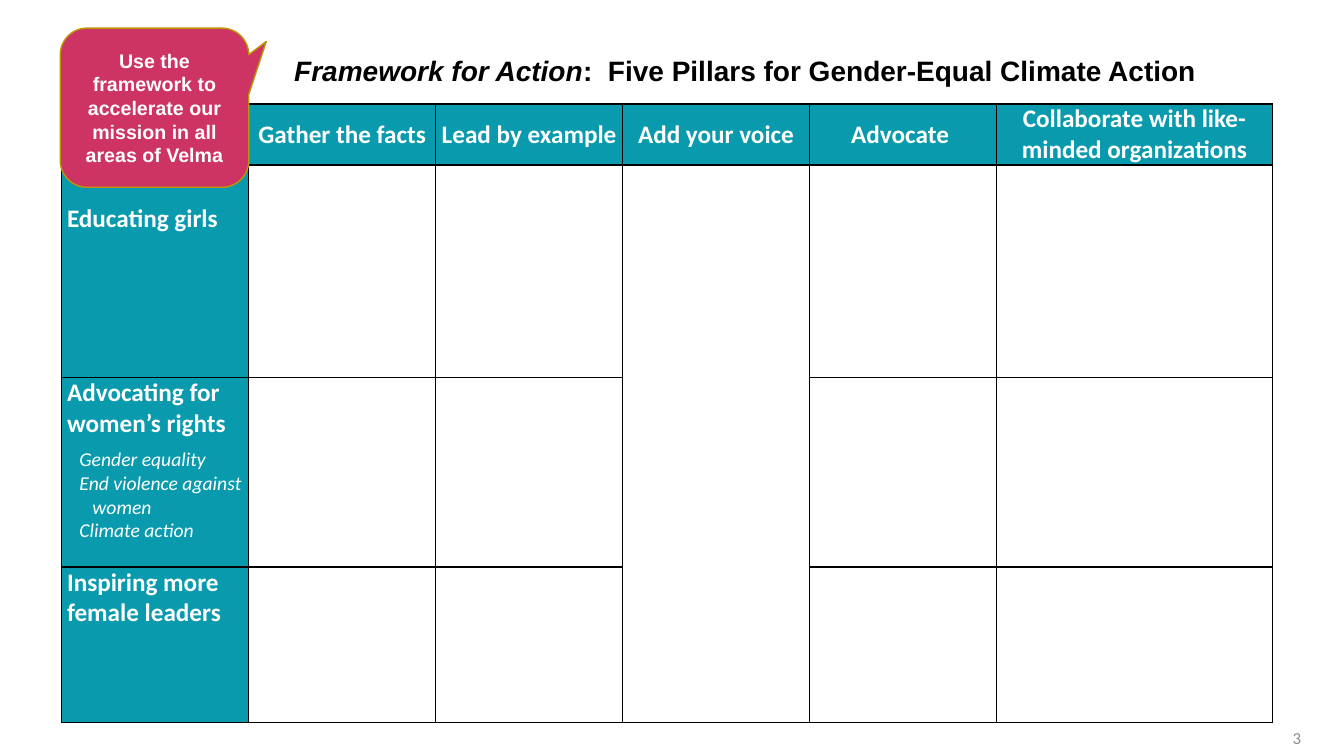
import pptx
import pptx.dml.color
import pptx.enum.shapes
import pptx.enum.text
import pptx.oxml.ns
import pptx.util
from lxml import etree

Cm = pptx.util.Cm
Pt = pptx.util.Pt
RGBColor = pptx.dml.color.RGBColor
Align = pptx.enum.text.PP_ALIGN
Anchor = pptx.enum.text.MSO_ANCHOR
qn = pptx.oxml.ns.qn

BLACK = RGBColor(0x00, 0x00, 0x00)
WHITE = RGBColor(0xFF, 0xFF, 0xFF)
GREY = RGBColor(0x8C, 0x8C, 0x8C)
TEAL = RGBColor(0x09, 0x9A, 0xAD)
PALE_TEAL = RGBColor(0x5E, 0xC8, 0xD9)
PINK = RGBColor(0xCD, 0x34, 0x63)
GOLD = RGBColor(0xBD, 0x95, 0x06)

PILLARS = ["Gather the facts", "Lead by example", "Add your voice", "Advocate ",
           "Collaborate with like-minded organizations"]
GOALS = [
    ("Educating girls", []),
    ("Advocating for women’s rights",
     ["Gender equality", "End violence against women", "Climate action"]),
    ("Inspiring more female leaders", []),
]
COLUMN_WIDTHS = [4.71] * 5 + [6.96]
ROW_HEIGHTS = [1.54, 5.36, 4.77, 3.91]
VOICE_COLUMN = 3


def write(para, text, font="Calibri", size=18, color=WHITE, bold=False, italic=False):
    """Append a formatted run to a paragraph."""
    span = para.add_run()
    span.text = text
    span.font.name = font
    span.font.size = Pt(size)
    span.font.color.rgb = color
    span.font.bold = bold
    span.font.italic = italic
    return span


def border_cell(cell, color=BLACK, width=1):
    properties = cell._tc.get_or_add_tcPr()
    for index, side in enumerate(("a:lnL", "a:lnR", "a:lnT", "a:lnB")):
        line = etree.Element(qn(side), w=str(Pt(width)))
        fill = etree.SubElement(line, qn("a:solidFill"))
        etree.SubElement(fill, qn("a:srgbClr"), val=str(color))
        properties.insert(index, line)


class FrameworkSlide:
    heading = {"bold": True}
    detail = {"size": 14, "italic": True}
    display = {"font": "Arial", "bold": True}

    def __init__(self, deck):
        self.page = deck.slides.add_slide(deck.slide_layouts[5])

    def title(self, left, top, width, height, parts):
        box = self.page.shapes.title
        box.left, box.top, box.width, box.height = Cm(left), Cm(top), Cm(width), Cm(height)
        box.text_frame.vertical_anchor = Anchor.MIDDLE
        para = box.text_frame.paragraphs[0]
        para.alignment = Align.CENTER
        para.line_spacing = 0.9
        for text, italic in parts:
            write(para, text, size=20, color=BLACK, italic=italic, **self.display)

    def page_number(self, left, top, width, height, number):
        box = self.page.shapes.add_textbox(Cm(left), Cm(top), Cm(width), Cm(height))
        box.text_frame.word_wrap = True
        box.text_frame.vertical_anchor = Anchor.MIDDLE
        para = box.text_frame.paragraphs[0]
        para.alignment = Align.RIGHT
        write(para, number, size=12, color=GREY)

    def cell(self, table, row, column, fill=None):
        cell = table.cell(row, column)
        cell.margin_left = cell.margin_right = Cm(0.13)
        cell.margin_top = cell.margin_bottom = 0
        if fill is None:
            cell.fill.background()
        else:
            cell.fill.solid()
            cell.fill.fore_color.rgb = fill
        border_cell(cell)
        return cell

    def pillar(self, cell, name):
        cell.vertical_anchor = Anchor.MIDDLE
        para = cell.text_frame.paragraphs[0]
        para.alignment = Align.CENTER
        para.space_after = Pt(6)
        write(para, name, **self.heading)

    def goal(self, cell, name, topics):
        para = cell.text_frame.paragraphs[0]
        para.space_after = Pt(6)
        write(para, name, **self.heading)
        for topic in topics:
            para = cell.text_frame.add_paragraph()
            properties = para._p.get_or_add_pPr()
            properties.set("marL", str(Cm(0.64)))
            properties.set("indent", str(Cm(-0.33)))
            write(para, topic, **self.detail)

    def framework(self, left, top):
        frame = self.page.shapes.add_table(
            len(ROW_HEIGHTS), len(COLUMN_WIDTHS), Cm(left), Cm(top),
            Cm(sum(COLUMN_WIDTHS)), Cm(sum(ROW_HEIGHTS)))
        table = frame.table
        for column, width in zip(table.columns, COLUMN_WIDTHS):
            column.width = Cm(width)
        for row, height in zip(table.rows, ROW_HEIGHTS):
            row.height = Cm(height)
        self.cell(table, 0, 0, PALE_TEAL)
        for column, name in enumerate(PILLARS, 1):
            self.pillar(self.cell(table, 0, column, TEAL), name)
        for row, (name, topics) in enumerate(GOALS, 1):
            self.goal(self.cell(table, row, 0, TEAL), name, topics)
            for column in range(1, len(COLUMN_WIDTHS)):
                self.cell(table, row, column)
        table.cell(1, 0).margin_top = Cm(0.98)  # clears the callout
        table.cell(1, VOICE_COLUMN).merge(table.cell(len(GOALS), VOICE_COLUMN))

    def callout(self, left, top, width, height, text):
        shape = self.page.shapes.add_shape(
            pptx.enum.shapes.MSO_SHAPE.ROUNDED_RECTANGULAR_CALLOUT,
            Cm(left), Cm(top), Cm(width), Cm(height))
        for index, value in enumerate((0.593, -0.416, 0.167)):
            shape.adjustments[index] = value
        shape.shadow.inherit = False
        shape.fill.solid()
        shape.fill.fore_color.rgb = PINK
        shape.line.color.rgb = GOLD
        shape.line.width = Pt(1)
        shape.text_frame.word_wrap = True
        shape.text_frame.vertical_anchor = Anchor.MIDDLE
        para = shape.text_frame.paragraphs[0]
        para.alignment = Align.CENTER
        write(para, text, size=14, **self.display)


def main():
    deck = pptx.Presentation()
    deck.slide_width, deck.slide_height = Cm(33.87), Cm(19.05)
    slide = FrameworkSlide(deck)
    slide.title(4.52, 0.84, 28.52, 1.96, [
        ("Framework for Action", True),
        (":  Five Pillars for Gender-Equal Climate Action", False)])
    slide.page_number(32, 18.29, 1.04, 0.58, "3")
    slide.framework(1.56, 2.62)
    slide.callout(1.52, 0.71, 4.75, 4.01,
                  "Use the framework to accelerate our mission in all areas of Velma")
    deck.save("out.pptx")


if __name__ == "__main__":
    main()
